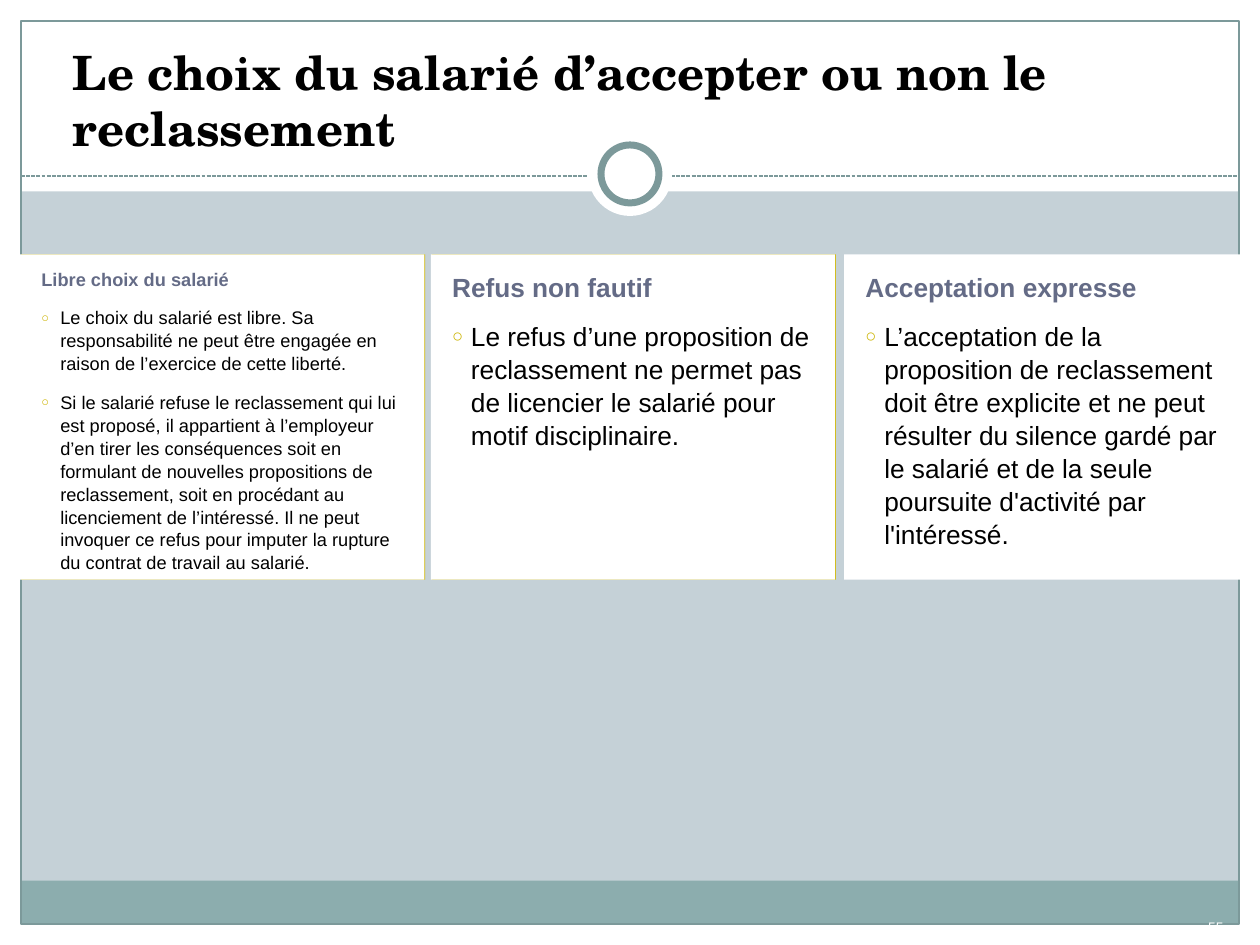
import pptx
import pptx.util
import pptx.dml.color
import pptx.enum.dml
import pptx.enum.shapes
import pptx.enum.text
import pptx.oxml
import pptx.oxml.ns

Pt = pptx.util.Pt
SHAPE = pptx.enum.shapes.MSO_SHAPE
ANCHOR = pptx.enum.text.MSO_ANCHOR
ALIGN = pptx.enum.text.PP_ALIGN

COLORS = {
    "background": "C5D1D7", "white": "FFFFFF", "band": "8CADAE",
    "frame": "7C999A", "heading": "646B86", "text": "000000", "accent": "CCB400",
}
W, H = 720, 540
MARGIN = 12
HEADER_H = 109.44

CARDS = [  # left, width, right inset, size, heading spacing, shadow, heading, bullets
    (11.5, 231, 11.5, 10.4, 0.7, True, "Libre choix du salarié", [
        "Le choix du salarié est libre. Sa responsabilité ne peut être engagée en raison "
        "de l’exercice de cette liberté.",
        "Si le salarié refuse le reclassement qui lui est proposé, il appartient à "
        "l’employeur d’en tirer les conséquences soit en formulant de nouvelles "
        "propositions de reclassement, soit en procédant au licenciement de l’intéressé. "
        "Il ne peut invoquer ce refus pour imputer la rupture du contrat de travail au "
        "salarié."]),
    (246.2, 231, 11.5, 15, 0.9, True, "Refus non fautif", [
        "Le refus d’une proposition de reclassement ne permet pas de licencier le salarié "
        "pour motif disciplinaire."]),
    (482.4, 226.8, 7.2, 15, 0.9, False, "Acceptation expresse", [
        "L’acceptation de la proposition de reclassement doit être explicite et ne peut "
        "résulter du silence gardé par le salarié et de la seule poursuite d'activité par "
        "l'intéressé."]),
]


def rgb(name):
    return pptx.dml.color.RGBColor.from_string(COLORS[name])


def add_shape(s, kind, box, fill=None, line=None, width=0.75):
    sp = s.shapes.add_shape(kind, *[Pt(v) for v in box])
    sp.shadow.inherit = False
    if fill:
        sp.fill.solid()
        sp.fill.fore_color.rgb = rgb(fill)
    else:
        sp.fill.background()
    if line:
        sp.line.color.rgb = rgb(line)
        sp.line.width = Pt(width)
    else:
        sp.line.fill.background()
    return sp


def set_frame(sp, anchor, left=7.2, top=3.6, right=7.2, bottom=3.6):
    tf = sp.text_frame
    tf.word_wrap = True
    tf.vertical_anchor = anchor
    tf.margin_left, tf.margin_top = Pt(left), Pt(top)
    tf.margin_right, tf.margin_bottom = Pt(right), Pt(bottom)
    return tf


def add_run(p, text, size, color, font="Arial", bold=False):
    r = p.add_run()
    r.text = text
    r.font.name, r.font.size, r.font.bold = font, Pt(size), bold
    r.font.color.rgb = rgb(color)


def set_bullet(p):
    pPr = p._p.get_or_add_pPr()
    pPr.set("marL", str(Pt(15.84)))
    pPr.set("indent", str(-Pt(10.8)))
    ns = pptx.oxml.ns.nsdecls("a")
    for xml in (f'<a:buClr {ns}><a:srgbClr val="{COLORS["accent"]}"/></a:buClr>',
                f'<a:buSzPct {ns} val="70000"/>',
                f'<a:buFont {ns} typeface="Arial"/>',
                f'<a:buChar {ns} char="○"/>'):
        pPr.append(pptx.oxml.parse_xml(xml))


def set_edge_shadow(sp):
    effects = sp._element.spPr.find(pptx.oxml.ns.qn("a:effectLst"))
    effects.append(pptx.oxml.parse_xml(
        f'<a:outerShdw {pptx.oxml.ns.nsdecls("a")} blurRad="0" dist="{Pt(0.5)}" dir="0" '
        f'algn="l" rotWithShape="0"><a:srgbClr val="{COLORS["accent"]}"/></a:outerShdw>'))


def add_backdrop(s, x, y, w, h):
    # White margins and header
    for box in ((x, y + h - MARGIN, w, MARGIN), (x, y, w, HEADER_H),
                (x, y, MARGIN, h), (x + w - MARGIN, y, MARGIN, h)):
        add_shape(s, SHAPE.RECTANGLE, box, "white")
    # Footer band and frame
    inner_w = w - 2 * MARGIN
    add_shape(s, SHAPE.RECTANGLE, (x + MARGIN, y + 503.2, inner_w, 24.6), "band")
    add_shape(s, SHAPE.RECTANGLE, (x + MARGIN, y + MARGIN, inner_w, h - 2 * MARGIN),
              line="frame")
    # Dashed rule under the title
    rule = s.shapes.add_connector(
        pptx.enum.shapes.MSO_CONNECTOR.STRAIGHT,
        Pt(x + MARGIN), Pt(y + 100.6), Pt(x + w - MARGIN), Pt(y + 100.6))
    rule.line.color.rgb = rgb("frame")
    rule.line.width = Pt(0.75)
    rule.line.dash_style = pptx.enum.dml.MSO_LINE.SQUARE_DOT
    rule._element.spPr.append(pptx.oxml.parse_xml(
        f'<a:effectLst {pptx.oxml.ns.nsdecls("a")}/>'))
    # Ring on the rule
    for d, line in ((48, None), (33.1, "frame")):
        add_shape(s, SHAPE.OVAL, (x + (w - d) / 2, y + 99.4 - d / 2, d, d),
                  "white", line, 4)


def add_title(s, x, y, w, h):
    sp = s.shapes.add_textbox(Pt(x), Pt(y), Pt(w), Pt(h))
    tf = set_frame(sp, ANCHOR.BOTTOM)
    add_run(tf.paragraphs[0], "Le choix du salarié d’accepter ou non le reclassement",
            27, "text", "TeX Gyre Schola", True)


def add_card(s, x, y, w, h, inset, size, spacing, shadow, heading, bullets):
    sp = add_shape(s, SHAPE.RECTANGLE, (x, y, w, h), "white")
    if shadow:
        set_edge_shadow(sp)
    tf = set_frame(sp, ANCHOR.TOP, 7.2, 11.5, inset, 11.5)
    p = tf.paragraphs[0]
    p.alignment = ALIGN.LEFT
    p.line_spacing = spacing
    p._p.get_or_add_pPr().set("marL", str(Pt(5.04)))
    add_run(p, heading, size, "heading", bold=True)
    for text in bullets:
        p = tf.add_paragraph()
        p.alignment = ALIGN.LEFT
        p.line_spacing = 1.05
        p.space_before = Pt(9)
        set_bullet(p)
        add_run(p, text, size, "text")


def add_page_number(s, x, y, w, h):
    sp = s.shapes.add_textbox(Pt(x), Pt(y), Pt(w), Pt(h))
    p = set_frame(sp, ANCHOR.MIDDLE, 3.6, 3.6, 3.6, 3.6).paragraphs[0]
    p.alignment = ALIGN.CENTER
    add_run(p, "55", 7.9, "white")


def main():
    prs = pptx.Presentation()
    prs.slide_width, prs.slide_height = Pt(W), Pt(H)
    s = prs.slides.add_slide(prs.slide_layouts[6])
    s.background.fill.solid()
    s.background.fill.fore_color.rgb = rgb("background")
    add_backdrop(s, 0, 0, W, H)
    add_title(s, 34.6, 20.2, 635.8, 72.7)
    for left, width, *content in CARDS:
        add_card(s, left, 145.4, width, 185.8, *content)
    add_page_number(s, 676, 519, 37.5, 21)
    prs.save("out.pptx")


if __name__ == "__main__":
    main()
